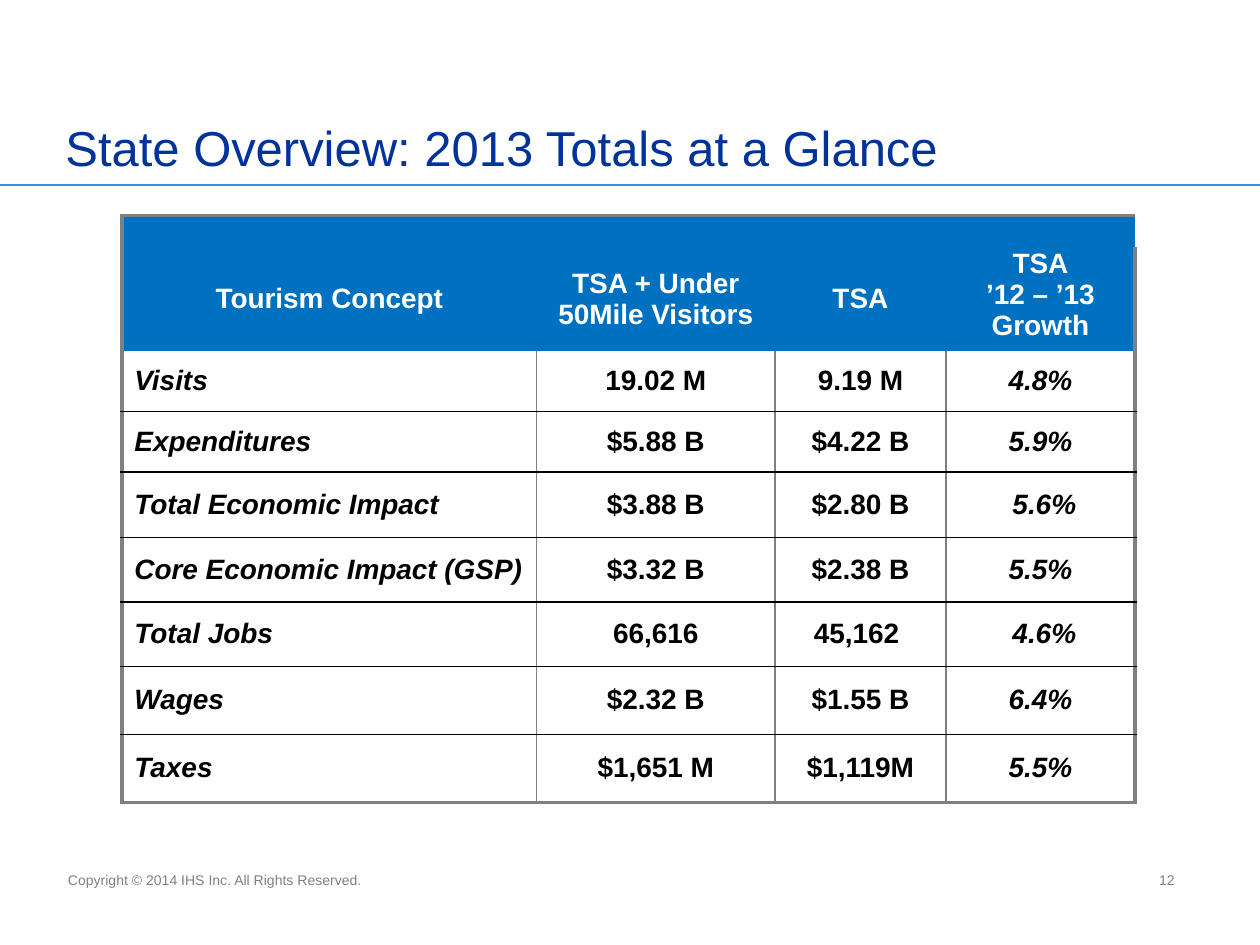
import dataclasses
import typing

import pptx
import pptx.dml.color
import pptx.enum.shapes
import pptx.enum.text
import pptx.oxml
import pptx.oxml.ns
import pptx.util

Cm = pptx.util.Cm
Pt = pptx.util.Pt
Align = pptx.enum.text.PP_ALIGN
Anchor = pptx.enum.text.MSO_ANCHOR

GREY = "808080"
BLACK = "000000"
WHITE = "FFFFFF"
BLUE = "0070C0"

WIDTHS = [8.36, 4.8, 3.45, 3.81]
HEIGHTS = [0.64, 1.93, 1.22, 1.22, 1.32, 1.3, 1.3, 1.37, 1.37]
HEADS = ["Tourism Concept", "TSA + Under 50Mile Visitors", "TSA", "TSA\v’12 – ’13 Growth"]
ROWS = [
    ["Visits", "19.02 M", "9.19 M", "4.8%"],
    ["Expenditures", "$5.88 B", "$4.22 B", "5.9%"],
    ["Total Economic Impact", "$3.88 B", "$2.80 B", " 5.6%"],
    ["Core Economic Impact (GSP)", "$3.32 B", "$2.38 B", "5.5%"],
    ["Total Jobs", "66,616", "45,162 ", " 4.6%"],
    ["Wages", "$2.32 B", "$1.55 B", "6.4%"],
    ["Taxes", "$1,651 M", "$1,119M", "5.5%"],
]


@dataclasses.dataclass
class Label:
    text: str
    left: float
    top: float
    width: float
    height: float
    size: int
    tint: str
    align: Align = Align.LEFT
    anchor: Anchor = Anchor.BOTTOM


LABELS = [
    Label("Copyright © 2014 IHS Inc. All Rights Reserved.", 1.12, 17.45, 9.07, 0.58, 8, GREY,
          anchor=Anchor.TOP),
    Label("State Overview: 2013 Totals at a Glance", 1.07, 0.53, 20.9, 3.15, 28, "003399"),
    Label("12", 21.39, 17.2, 2.54, 0.84, 8, GREY, align=Align.RIGHT),
]


def color(code: str) -> pptx.dml.color.RGBColor:
    return pptx.dml.color.RGBColor.from_string(code)


def style(item: typing.Any, values: dict) -> None:
    for name, value in values.items():
        setattr(item, name, value)


def write(frame: typing.Any, text: str, tint: str, align: Align, looks: dict) -> None:
    par = frame.paragraphs[0]
    par.alignment = align
    for index, part in enumerate(text.split("\v")):
        if index:
            par.add_line_break()
        run = par.add_run()
        run.text = part
        style(run.font, {"name": "Arial", **looks})
        run.font.color.rgb = color(tint)


def draw_label(slide: typing.Any, label: Label) -> None:
    box = slide.shapes.add_textbox(
        Cm(label.left), Cm(label.top), Cm(label.width), Cm(label.height))
    style(box.text_frame, {"word_wrap": True, "vertical_anchor": label.anchor})
    write(box.text_frame, label.text, label.tint, label.align, {"size": Pt(label.size)})


def draw_rule(slide: typing.Any) -> None:
    rule = slide.shapes.add_connector(
        pptx.enum.shapes.MSO_CONNECTOR.STRAIGHT, 0, Cm(3.73), Cm(25.4), Cm(3.73))
    rule.line.width = Pt(1)
    rule.line.color.rgb = color("3390E1")
    rule._element.spPr.append(pptx.oxml.parse_xml(
        f"<a:effectLst {pptx.oxml.ns.nsdecls('a')}/>"))


def edge(cell: typing.Any, side: str, tint: str, width: float) -> None:
    fill = f'<a:solidFill><a:srgbClr val="{tint}"/></a:solidFill>' if width else "<a:noFill/>"
    cell._tc.get_or_add_tcPr().append(pptx.oxml.parse_xml(
        f'<a:ln{side} {pptx.oxml.ns.nsdecls("a")} w="{Pt(width)}">{fill}</a:ln{side}>'))


def frame_cell(cell: typing.Any, row: int, col: int) -> None:
    head = row < 2
    last = len(HEIGHTS) - 1
    inner = 0 if head else 1
    edge(cell, "L", GREY, 2.25 if col == 0 else inner)
    edge(cell, "R", GREY, 2.25 if col == len(WIDTHS) - 1 else inner)
    edge(cell, "T", GREY if row == 0 else BLACK, 2.25 if row == 0 else int(row > 2))
    edge(cell, "B", GREY if row == last else BLACK, 2.25 if row == last else inner)
    cell.fill.solid()
    cell.fill.fore_color.rgb = color(BLUE if head else WHITE)


def draw_table(slide: typing.Any) -> None:
    table = slide.shapes.add_table(
        len(HEIGHTS), len(WIDTHS), Cm(2.46), Cm(4.34), Cm(sum(WIDTHS)), Cm(sum(HEIGHTS))).table
    style(table, {"first_row": False, "horz_banding": False})
    for col, width in zip(table.columns, WIDTHS):
        col.width = Cm(width)
    for row, height in zip(table.rows, HEIGHTS):
        row.height = Cm(height)
    insets = {"margin_left": Cm(0.25), "margin_right": Cm(0.25),
              "margin_top": Cm(0.03), "margin_bottom": Cm(0.03)}
    for r, texts in enumerate([[""] * len(WIDTHS), HEADS, *ROWS]):
        for c, text in enumerate(texts):
            cell = table.cell(r, c)
            tall = r == 1 and c == 3
            style(cell, {**insets, "vertical_anchor": Anchor.TOP if tall else Anchor.MIDDLE})
            frame_cell(cell, r, c)
            if r == 0:
                cell.text_frame.paragraphs[0].font.size = Pt(8)
                continue
            looks = {"size": Pt(16), "bold": True, "italic": r > 1 and c in (0, 3)}
            align = Align.LEFT if r > 1 and c == 0 else Align.CENTER
            write(cell.text_frame, text, WHITE if r == 1 else BLACK, align, looks)
    table.cell(0, 0).merge(table.cell(0, len(WIDTHS) - 1))


def main() -> None:
    deck = pptx.Presentation()
    style(deck, {"slide_width": Cm(25.4), "slide_height": Cm(19.05)})
    slide = deck.slides.add_slide(deck.slide_layouts[6])
    draw_rule(slide)
    for label in LABELS:
        draw_label(slide, label)
    draw_table(slide)
    deck.save("out.pptx")


if __name__ == "__main__":
    main()
